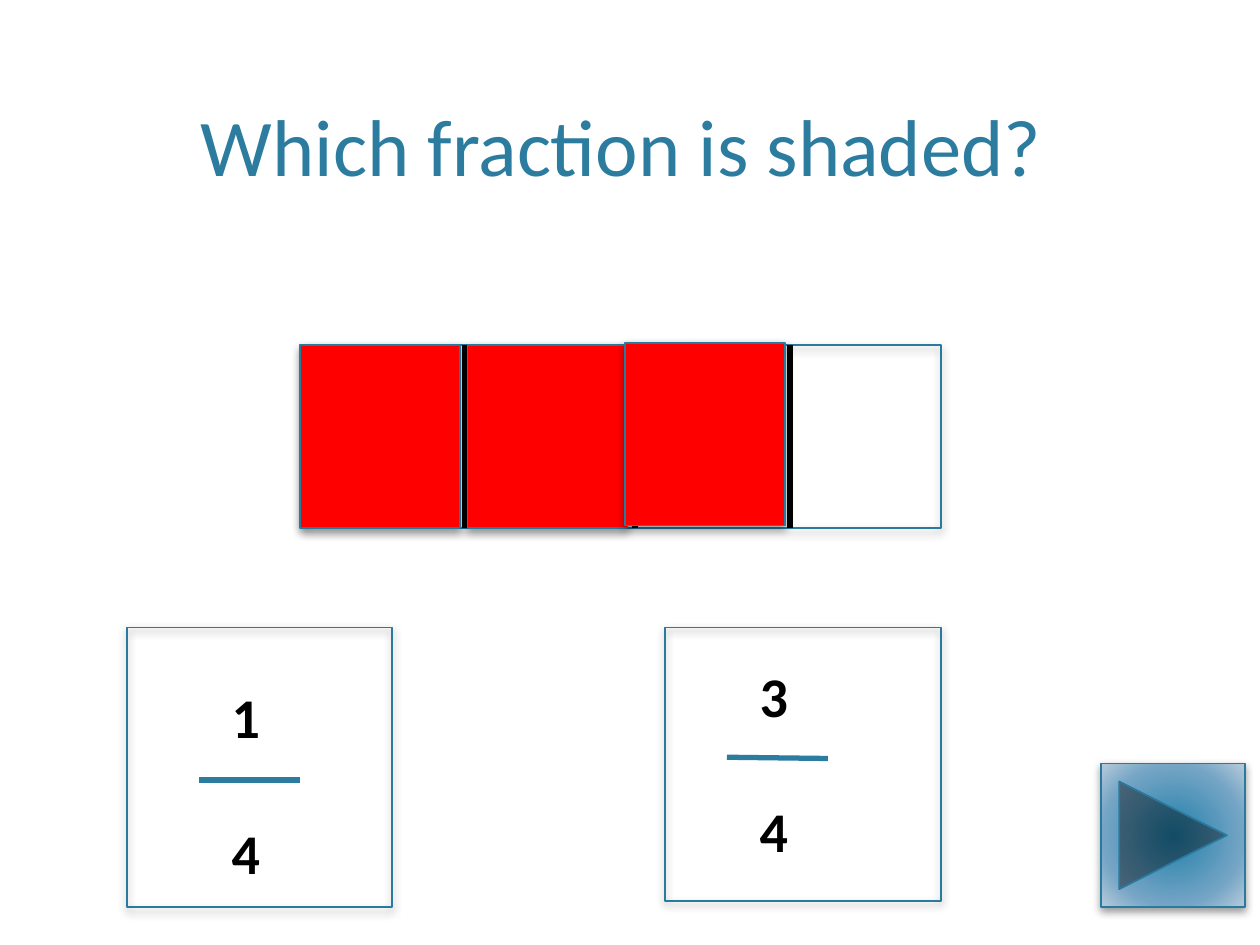
"""Build a quiz slide that asks which fraction of a bar is shaded."""
from typing import NamedTuple, Optional

import lxml.etree
import pptx
import pptx.dml.color
import pptx.enum.shapes
import pptx.enum.text
import pptx.oxml.ns
import pptx.util

PX_PER_INCH = 100
EMU_PER_PX = 914400 // PX_PER_INCH
FONT = "Calibri"

RGBColor = pptx.dml.color.RGBColor
BLACK = RGBColor(0x00, 0x00, 0x00)
RED = RGBColor(0xFF, 0x00, 0x00)
TEAL = RGBColor(0x2C, 0x7C, 0x9F)
OUTLINE = RGBColor(0x28, 0x7A, 0x9E)
BUTTON_STOPS = (
    (0, RGBColor(0x21, 0x80, 0xAA)),
    (69, RGBColor(0x75, 0xA5, 0xC5)),
    (100, RGBColor(0xB8, 0xCC, 0xDC)),
)

RECTANGLE = pptx.enum.shapes.MSO_SHAPE.RECTANGLE
NEXT_BUTTON = pptx.enum.shapes.MSO_SHAPE.ACTION_BUTTON_FORWARD_OR_NEXT


class Box(NamedTuple):
    left: int
    top: int
    width: int
    height: int


class Rule(NamedTuple):
    x1: int
    y1: int
    x2: int
    y2: int
    color: RGBColor


class Fraction(NamedTuple):
    numerator: str
    denominator: str
    box: Box
    bar: Rule


BAR = Box(242, 274, 505, 145)
DIVIDERS = [Rule(x, BAR.top, x, BAR.top + BAR.height, BLACK) for x in (504, 369, 627)]
SHADED_PARTS = [Box(left, top, 127, 145) for left, top in ((238, 274), (371, 274), (496, 272))]
ANSWER_CARDS = (Box(528, 498, 219, 217), Box(101, 498, 210, 222))
FRACTIONS = (
    Fraction("1", "4", Box(174, 537, 68, 172), Rule(158, 619, 238, 619, TEAL)),
    Fraction("3", "4", Box(593, 520, 68, 172), Rule(577, 601, 657, 602, TEAL)),
)


def px(length: int) -> pptx.util.Emu:
    return pptx.util.Emu(length * EMU_PER_PX)


def add_child(parent, tag: str, **attributes):
    return lxml.etree.SubElement(
        parent, pptx.oxml.ns.qn(tag), {key: str(value) for key, value in attributes.items()}
    )


def add_shadow(shape) -> None:
    shape.shadow.inherit = False
    effects = shape.element.spPr.find(pptx.oxml.ns.qn("a:effectLst"))
    shadow = add_child(
        effects, "a:outerShdw", blurRad=pptx.util.Pt(5), dist=pptx.util.Pt(2),
        dir=5400000, rotWithShape=0,
    )
    add_child(add_child(shadow, "a:srgbClr", val=BLACK), "a:alpha", val=40000)


def add_radial_fill(shape) -> None:
    properties = shape.element.spPr
    gradient = add_child(properties, "a:gradFill", rotWithShape=1)
    stops = add_child(gradient, "a:gsLst")
    for percent, color in BUTTON_STOPS:
        add_child(add_child(stops, "a:gs", pos=percent * 1000), "a:srgbClr", val=color)
    focus = add_child(gradient, "a:path", path="circle")
    add_child(focus, "a:fillToRect", l=100000, t=100000, r=100000, b=100000)
    properties.find(pptx.oxml.ns.qn("a:prstGeom")).addnext(gradient)


def draw_shape(slide, box: Box, fill: Optional[RGBColor] = None, kind=RECTANGLE):
    shape = slide.shapes.add_shape(kind, *map(px, box))
    if fill is None:
        shape.fill.background()
    else:
        shape.fill.solid()
        shape.fill.fore_color.rgb = fill
    shape.line.color.rgb = OUTLINE
    shape.line.width = pptx.util.Pt(1)
    add_shadow(shape)
    return shape


def draw_next_button(slide, box: Box) -> None:
    button = draw_shape(slide, box, kind=NEXT_BUTTON)
    properties = button.element.spPr
    properties.remove(properties.find(pptx.oxml.ns.qn("a:noFill")))
    add_radial_fill(button)


def draw_rule(slide, rule: Rule) -> None:
    straight = pptx.enum.shapes.MSO_CONNECTOR.STRAIGHT
    line = slide.shapes.add_connector(
        straight, px(rule.x1), px(rule.y1), px(rule.x2), px(rule.y2)
    )
    line.line.color.rgb = rule.color
    line.line.width = pptx.util.Pt(3)
    add_child(line.element.spPr, "a:effectLst")


def add_frame(slide, box: Box):
    frame = slide.shapes.add_textbox(*map(px, box)).text_frame
    frame.word_wrap = True
    return frame


def add_run(paragraph, text: str, size: int, color: RGBColor, bold: bool = False) -> None:
    run = paragraph.add_run()
    run.text = text
    run.font.name = FONT
    run.font.size = pptx.util.Pt(size)
    run.font.bold = bold
    run.font.color.rgb = color


def draw_title(slide, text: str, box: Box) -> None:
    frame = add_frame(slide, box)
    frame.vertical_anchor = pptx.enum.text.MSO_ANCHOR.BOTTOM
    question = frame.paragraphs[0]
    question.alignment = pptx.enum.text.PP_ALIGN.CENTER
    add_run(question, text, 46, TEAL)


def draw_fraction(slide, fraction: Fraction) -> None:
    frame = add_frame(slide, fraction.box)
    add_run(frame.paragraphs[0], fraction.numerator, 32, BLACK, bold=True)
    denominator = frame.add_paragraph()
    denominator.space_before = pptx.util.Pt(39)
    add_run(denominator, fraction.denominator, 32, BLACK, bold=True)
    draw_rule(slide, fraction.bar)


def main() -> None:
    deck = pptx.Presentation()
    deck.slide_width, deck.slide_height = px(1000), px(750)
    slide = deck.slides.add_slide(deck.slide_layouts[6])

    draw_title(slide, "Which fraction is shaded? ", Box(60, 12, 880, 146))
    draw_next_button(slide, Box(874, 606, 114, 114))
    draw_shape(slide, BAR)
    for divider in DIVIDERS:
        draw_rule(slide, divider)
    for part in SHADED_PARTS:
        draw_shape(slide, part, RED)
    for card in ANSWER_CARDS:
        draw_shape(slide, card)
    for fraction in FRACTIONS:
        draw_fraction(slide, fraction)

    deck.save("out.pptx")


if __name__ == "__main__":
    main()
